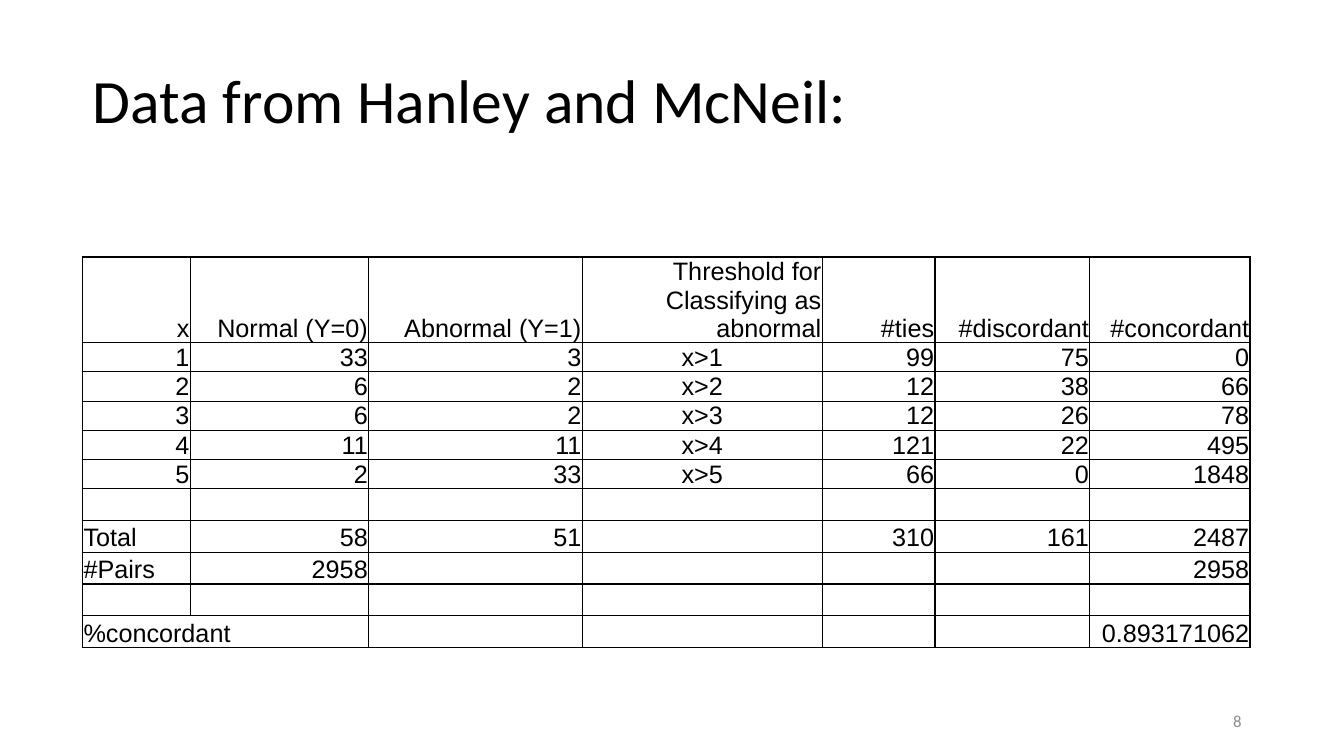
from dataclasses import dataclass

from lxml import etree
from pptx import Presentation
from pptx.dml.color import RGBColor
from pptx.enum import text
from pptx.oxml import ns
from pptx.util import Pt


@dataclass(frozen=True)
class Theme:
    ink: str = "000000"
    grey: str = "8C8C8C"
    head: str = "Calibri"
    body: str = "Arial"
    title: int = 44
    cell: int = 18
    note: int = 12
    rule: int = 1


THEME = Theme()
LEFT, RIGHT, MID = text.PP_ALIGN.LEFT, text.PP_ALIGN.RIGHT, text.PP_ALIGN.CENTER

WIDTHS = [77, 127.4, 152.6, 171.4, 80.6, 110.6, 114.4]
TALL, LOW = 61, 20.6
ROWS = [
    ["x", "Normal (Y=0)", "Abnormal (Y=1)",
     "Threshold for Classifying as abnormal", "#ties", "#discordant", "#concordant"],
    ["1", "33", "3", "x>1", "99", "75", "0"],
    ["2", "6", "2", "x>2", "12", "38", "66"],
    ["3", "6", "2", "x>3", "12", "26", "78"],
    ["4", "11", "11", "x>4", "121", "22", "495"],
    ["5", "2", "33", "x>5", "66", "0", "1848"],
    [""] * 7,
    ["Total", "58", "51", "", "310", "161", "2487"],
    ["#Pairs", "2958", "", "", "", "", "2958"],
    [""] * 7,
    ["%concordant", "", "", "", "", "", "0.893171062"],
]


def apply(item, form):
    for key, value in form.items():
        setattr(item, key, value)


def place(shape, left, top, width, height):
    apply(shape, {"left": Pt(left), "top": Pt(top),
                  "width": Pt(width), "height": Pt(height)})


def write(frame, words, size, face, color, align):
    par = frame.paragraphs[0]
    par.alignment = align
    if words:
        run = par.add_run()
        run.text = words
        apply(run.font, {"size": Pt(size), "name": face, "bold": False})
        run.font.color.rgb = RGBColor.from_string(color)
    else:
        # An empty cell needs its type size to keep the row low.
        etree.SubElement(par._p, ns.qn("a:endParaRPr"), sz=str(size * 100))
    return par


def border(cell):
    props = cell._tc.get_or_add_tcPr()
    for spot, side in enumerate(("lnL", "lnR", "lnT", "lnB")):
        line = etree.Element(ns.qn(f"a:{side}"), w=str(Pt(THEME.rule)))
        fill = etree.SubElement(line, ns.qn("a:solidFill"))
        etree.SubElement(fill, ns.qn("a:srgbClr"), val=THEME.ink)
        props.insert(spot, line)


def align_of(row, col, words):
    if col == 0 and words[:1] in ("T", "#", "%"):
        return LEFT
    return MID if col == 3 and row > 0 else RIGHT


def add_grid(slide):
    high = TALL + LOW * (len(ROWS) - 1)
    grid = slide.shapes.add_table(len(ROWS), len(WIDTHS), Pt(59), Pt(183.6),
                                  Pt(sum(WIDTHS)), Pt(high)).table
    apply(grid, {"first_row": False, "horz_banding": False})
    for col, width in zip(grid.columns, WIDTHS):
        col.width = Pt(width)
    for r, row in enumerate(ROWS):
        grid.rows[r].height = Pt(LOW if r else TALL)
        for c, words in enumerate(row):
            cell = grid.cell(r, c)
            apply(cell, {"margin_left": Pt(0.7), "margin_right": Pt(0.7),
                         "margin_top": Pt(0.7), "margin_bottom": 0,
                         "vertical_anchor": text.MSO_ANCHOR.BOTTOM})
            cell.fill.background()
            border(cell)
            write(cell.text_frame, words, THEME.cell, THEME.body, THEME.ink,
                  align_of(r, c, words))
    last = len(ROWS) - 1
    grid.cell(last, 0).merge(grid.cell(last, 1))


def add_title(slide, words):
    title = slide.shapes.title
    place(title, 59, 21.6, 828, 104.4)
    title.text_frame.vertical_anchor = text.MSO_ANCHOR.MIDDLE
    par = write(title.text_frame, words, THEME.title, THEME.head, THEME.ink, LEFT)
    par.line_spacing = 0.9


def add_number(slide, words):
    box = slide.shapes.add_textbox(Pt(678), Pt(500.4), Pt(216), Pt(28.8))
    apply(box.text_frame, {"word_wrap": True,
                           "vertical_anchor": text.MSO_ANCHOR.MIDDLE})
    write(box.text_frame, words, THEME.note, THEME.head, THEME.grey, RIGHT)


def main():
    deck = Presentation()
    apply(deck, {"slide_width": Pt(960), "slide_height": Pt(540)})
    slide = deck.slides.add_slide(deck.slide_layouts[5])
    add_grid(slide)
    add_title(slide, "Data from Hanley and McNeil:")
    add_number(slide, "8")
    deck.save("out.pptx")


if __name__ == "__main__":
    main()
